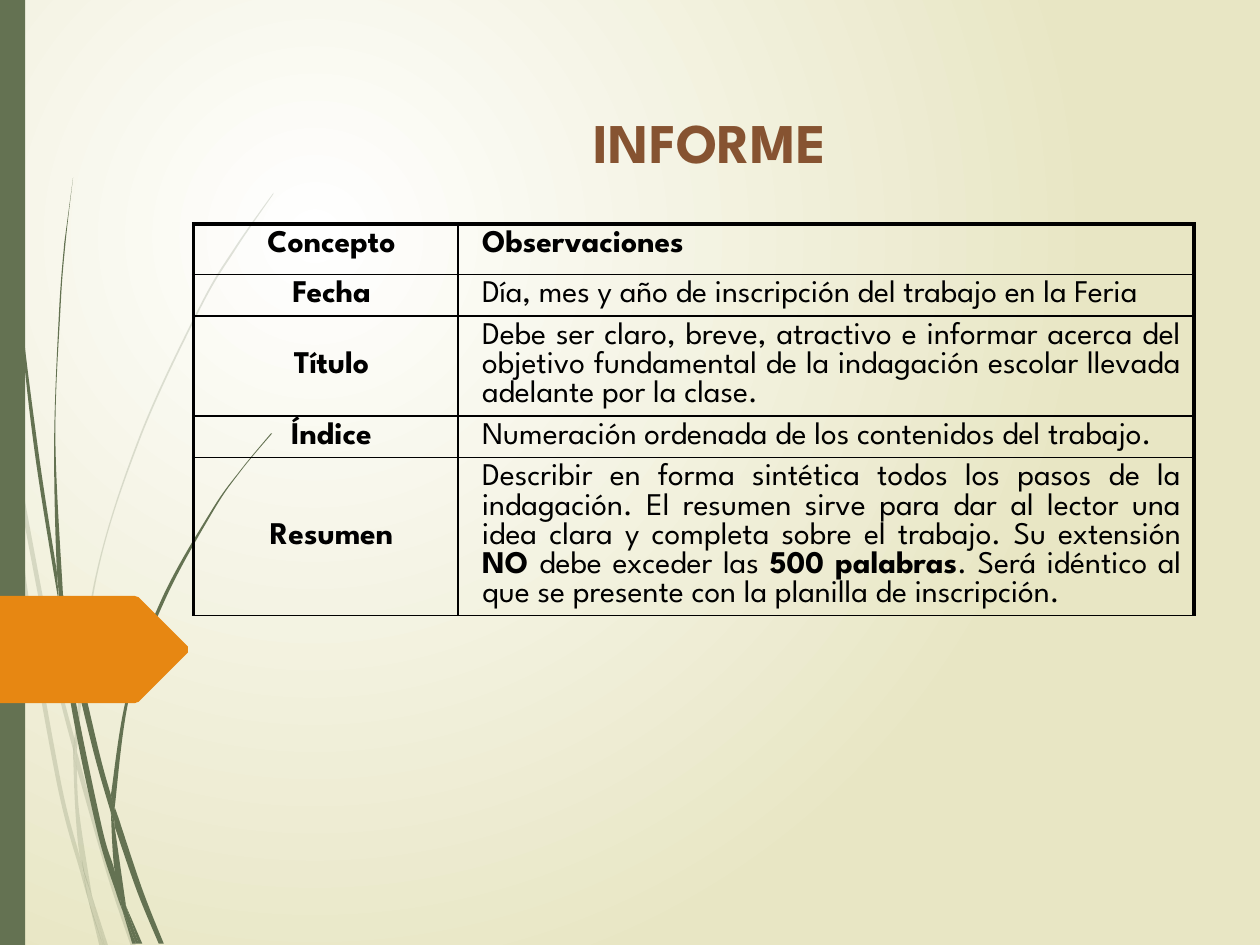
from lxml import etree
from pptx import Presentation
from pptx import util as u
from pptx.dml.color import RGBColor
from pptx.enum import shapes, text
from pptx.oxml import ns

WHITE = RGBColor(0xFF, 0xFF, 0xFF)
CREAM = RGBColor(0xE8, 0xE6, 0xC4)
GREEN = RGBColor(0x64, 0x72, 0x52)
ORANGE = RGBColor(0xE7, 0x87, 0x12)
BROWN = RGBColor(0x86, 0x53, 0x31)
BLACK = RGBColor(0, 0, 0)
FONT = "League Spartan"
GRID = u.Pt(0.72)
THIN, THICK = 1, 2.25

PALE_BLADES = [
    ([(8, 350), (6, 322), (0, 282)], [(0, 299), (7, 344)]),
    ([(59, 586), (43, 520), (10, 345)], [(12, 376), (40, 522), (59, 599)]),
    ([(61, 596), (64, 607), (88, 692), (108, 751)], [(104, 751), (85, 694), (61, 610)]),
    ([(83, 751), (73, 711)], [(86, 751)]),
    ([(70, 714), (64, 683), (48, 619), (22, 469), (12, 376), (8, 350)],
     [(8, 350), (19, 470), (45, 621), (64, 693), (70, 714)]),
    ([(58, 599), (60, 646), (64, 683), (73, 711)], [(73, 711), (63, 646), (61, 610)]),
    ([(61, 596), (76, 462), (111, 349), (159, 245), (187, 198), (217, 154)],
     [(217, 153), (186, 197), (158, 244), (110, 348), (75, 461), (59, 586)]),
    ([(70, 714), (79, 751)], [(82, 751)]),
    ([(61, 610), (61, 596), (59, 586)], [(58, 599)]),
    ([(67, 692), (65, 683), (70, 714), (82, 751)], [(83, 751), (73, 711)]),
]
DARK_BLADES = [
    ([(2, 0), (3, 48), (5, 110), (14, 233), (27, 355), (47, 481)],
     [(45, 453), (30, 355), (15, 232), (6, 109), (4, 48), (3, 0)]),
    ([(88, 645), (73, 592), (53, 505), (50, 472)], [(50, 472), (77, 590), (88, 631)]),
    ([(91, 641), (94, 649), (113, 706), (130, 749)], [(126, 749), (109, 708), (91, 656)]),
    ([(97, 722), (91, 691), (81, 657), (60, 556), (53, 505), (47, 477)],
     [(47, 477), (56, 557), (77, 659), (92, 708), (97, 722)]),
    ([(50, 472), (44, 349), (48, 245), (52, 193), (58, 141)],
     [(51, 193), (47, 245), (43, 349), (45, 449), (49, 472)]),
    ([(100, 719), (110, 749)], [(113, 749)]),
    ([(53, 505), (50, 472)], [(45, 449), (47, 477)]),
    ([(91, 641), (103, 552), (131, 476), (169, 406), (191, 374), (216, 344)],
     [(215, 344), (191, 373), (168, 405), (129, 474), (101, 551), (88, 631)]),
    ([(97, 722), (105, 749)], [(108, 749)]),
    ([(88, 645), (91, 691), (100, 719)], [(100, 719), (91, 656)]),
    ([(91, 656), (91, 641), (88, 631)], [(88, 645)]),
    ([(97, 722), (91, 691), (100, 719), (110, 749)], [(108, 749)]),
]
ARROW = [(-3, 473), (107, 473), (110, 474), (149, 513), (149, 518), (110, 557), (107, 558), (-3, 558)]

ROWS = [
    (28.8, "Concepto", [("Observaciones", True)]),
    (20.16, "Fecha", [("Día, mes y año de inscripción del trabajo en la Feria", False)]),
    (52.56, "Título", [("Debe ser claro, breve, atractivo e informar acerca del objetivo fundamental "
                        "de la indagación escolar llevada adelante por la clase.", False)]),
    (20.16, "Índice", [("Numeración ordenada de los contenidos del trabajo.", False)]),
    (70.56, "Resumen", [
        ("Describir en forma sintética todos los pasos de la indagación. El resumen sirve para dar al "
         "lector una idea clara y completa sobre el trabajo. Su extensión ", False),
        ("NO ", True), ("debe exceder las ", False), ("500 palabras", True),
        (". Será idéntico al que se presente con la planilla de inscripción.", False)]),
]


def paint(shape, color):
    """Give the shape a plain fill without line or shadow."""
    shape.shadow.inherit = False
    shape.fill.solid()
    shape.fill.fore_color.rgb = color
    shape.line.fill.background()


def add_outline(parts, left, top, points, color):
    """Draw a closed filled outline from hundredths of an inch."""
    scaled = [(x * GRID, y * GRID) for x, y in points]
    builder = parts.build_freeform(*scaled[0])
    builder.add_line_segments(scaled[1:], close=True)
    shape = builder.convert_to_shape(left, top)
    paint(shape, color)
    return shape


def bend(shape, edges):
    """Turn the straight segments within each edge into smooth curves."""
    points = [point for edge in edges for point in edge]
    min_x, min_y = (min(axis) for axis in zip(*points))
    lines = iter(shape._element.findall(".//" + ns.qn("a:lnTo")))
    for number, edge in enumerate(edges):
        if number:
            next(lines)
        padded = [edge[0], *edge, edge[-1]]
        for before, start, end, after in zip(padded, padded[1:], padded[2:], padded[3:]):
            line = next(lines)
            line.tag = ns.qn("a:cubicBezTo")
            handles = [[s + (e - b) / 6 for b, s, e in zip(before, start, end)],
                       [e - (a - s) / 6 for s, e, a in zip(start, end, after)]]
            for index, (x, y) in enumerate(handles):
                line.insert(index, etree.Element(
                    ns.qn("a:pt"), x=str(round((x - min_x) * GRID)), y=str(round((y - min_y) * GRID))))


def add_blades(page, left, top, blades, opacity):
    """Draw one group of grass blades."""
    tuft = page.shapes.add_group_shape()
    for edges in blades:
        shape = add_outline(tuft.shapes, left, top, edges[0] + edges[1], GREEN)
        bend(shape, edges)
        if opacity < 100:
            tint = shape.fill._xPr.find(".//" + ns.qn("a:srgbClr"))
            etree.SubElement(tint, ns.qn("a:alpha"), val=str(opacity * 1000))


def add_decoration(page, left, top, height):
    """Draw the grass blades, side bar and arrow."""
    add_blades(page, left, top, PALE_BLADES, 20)
    add_blades(page, left, top, DARK_BLADES, 100)
    bar = page.shapes.add_shape(shapes.MSO_SHAPE.RECTANGLE, left, top, u.Pt(14.4), height)
    paint(bar, GREEN)
    add_outline(page.shapes, left, top, ARROW, ORANGE)


def paint_background(page):
    """Fill the page with a glow centred in its upper left quarter."""
    fill = page.background.fill
    fill.gradient()
    for stop, color in zip(fill.gradient_stops, (WHITE, CREAM)):
        stop.color.rgb = color
    gradient = page.background._cSld.find(".//" + ns.qn("a:gradFill"))
    gradient.remove(gradient.find(ns.qn("a:lin")))
    glow = etree.SubElement(gradient, ns.qn("a:path"), path="circle")
    etree.SubElement(glow, ns.qn("a:fillToRect"), l="50000", t="50000", r="100000", b="100000")


def add_span(para, words, size, color, bold):
    """Append one formatted run."""
    span = para.add_run()
    span.text = words
    font = span.font
    font.name, font.size, font.bold = FONT, u.Pt(size), bold
    font.color.rgb = color


def add_title(page, left, top, width, height):
    """Place and format the title."""
    title = page.shapes.title
    title.left, title.top, title.width, title.height = left, top, width, height
    frame = title.text_frame
    frame.auto_size = text.MSO_AUTO_SIZE.NONE
    frame.vertical_anchor = text.MSO_ANCHOR.BOTTOM
    para = frame.paragraphs[0]
    para.alignment = text.PP_ALIGN.CENTER
    para.line_spacing = 1.5
    add_span(para, "INFORME", 32, BROWN, True)


def set_borders(cell, **widths):
    """Give the cell black borders of the given widths in points."""
    props = cell._tc.get_or_add_tcPr()
    for index, (side, width) in enumerate(widths.items()):
        line = etree.Element(ns.qn("a:" + side), w=str(u.Pt(width)))
        fill = etree.SubElement(line, ns.qn("a:solidFill"))
        etree.SubElement(fill, ns.qn("a:srgbClr"), val=str(BLACK))
        props.insert(index, line)


def fill_cell(cell, spans, align, anchor):
    """Write the runs of one table cell."""
    cell.fill.background()
    cell.vertical_anchor = anchor
    para = cell.text_frame.paragraphs[0]
    para.alignment = align
    para.space_before = u.Pt(6)
    para._p.get_or_add_pPr().set("marL", str(u.Pt(6.5)))
    for words, bold in spans:
        add_span(para, words, 18, BLACK, bold)


def add_concepts(page, left, top, widths):
    """Build the table of concepts and remarks."""
    height = u.Pt(sum(row[0] for row in ROWS))
    table = page.shapes.add_table(len(ROWS), 2, left, top, sum(widths), height).table
    table.first_row = table.horz_banding = False
    for column, width in zip(table.columns, widths):
        column.width = width
    for index, (row_height, concept, remarks) in enumerate(ROWS):
        header = index == 0
        table.rows[index].height = u.Pt(row_height)
        name, remark = table.cell(index, 0), table.cell(index, 1)
        fill_cell(name, [(concept, True)], text.PP_ALIGN.CENTER,
                  text.MSO_ANCHOR.TOP if header else text.MSO_ANCHOR.MIDDLE)
        fill_cell(remark, remarks, text.PP_ALIGN.LEFT if header else text.PP_ALIGN.JUSTIFY,
                  text.MSO_ANCHOR.TOP)
        upper = THICK if header else THIN
        set_borders(name, lnL=THICK, lnR=THIN, lnT=upper, lnB=THIN)
        set_borders(remark, lnL=THIN, lnR=THICK, lnT=upper, lnB=THIN)


def main():
    """Build and save the deck."""
    deck = Presentation()
    deck.slide_width, deck.slide_height = u.Pt(720), u.Pt(540)
    page = deck.slides.add_slide(deck.slide_layouts[5])
    paint_background(page)
    add_decoration(page, u.Pt(0), u.Pt(0), deck.slide_height)
    add_title(page, u.Pt(110.6), u.Pt(43.2), u.Pt(590.4), u.Pt(60.48))
    add_concepts(page, u.Pt(110.6), u.Pt(128.1), (u.Pt(151.2), u.Pt(420.48)))
    deck.save("out.pptx")


if __name__ == "__main__":
    main()
